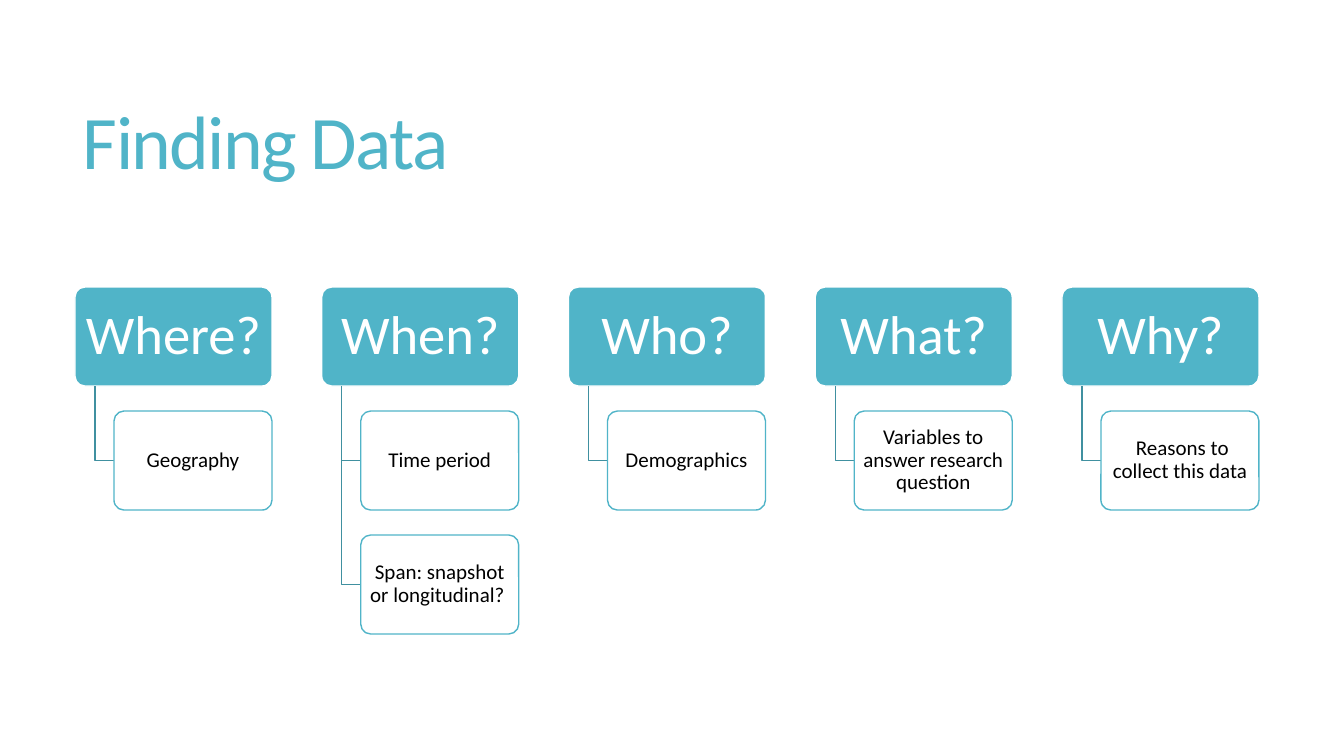
from lxml import etree
from pptx import Presentation
from pptx.dml.color import RGBColor
from pptx.enum.shapes import MSO_SHAPE
from pptx.enum.text import MSO_ANCHOR, MSO_AUTO_SIZE, PP_ALIGN
from pptx.oxml.ns import qn
from pptx.util import Pt

ROUNDED = MSO_SHAPE.ROUNDED_RECTANGLE
MIDDLE = MSO_ANCHOR.MIDDLE
NO_AUTOFIT = MSO_AUTO_SIZE.NONE
LEFT, CENTER = PP_ALIGN.LEFT, PP_ALIGN.CENTER

EMU_PER_PX = 914400 / 100.8
TEAL, STEM, WHITE, BLACK = "50B4C8", "4090A0", "FFFFFF", "000000"
BOX_HEIGHT, BOX_GAP = 99, 25
COLUMN_WIDTH = 197
STEM_INDENT, ANSWER_INDENT = 20, 39

HEADER = {"fill": TEAL, "line": WHITE, "size": 39, "color": WHITE, "inset": 4}
ANSWER = {"fill": WHITE, "line": TEAL, "size": 15, "color": BLACK, "inset": 3, "alpha": 90}

QUESTIONS = [
    ("Where?", ["Geography"]),
    ("When?", ["Time period", "Span: snapshot or longitudinal? "]),
    ("Who?", ["Demographics"]),
    ("What?", ["Variables to answer research question"]),
    ("Why?", [" Reasons to collect this data"]),
]


def px(length):
    """Turn pixels into EMU."""
    return round(length * EMU_PER_PX)


def rgb(color):
    """Turn a hex string into a colour."""
    return RGBColor.from_string(color)


def set_values(target, values):
    """Set each attribute of the target from a dict."""
    for name, value in values.items():
        setattr(target, name, value)


def write_text(frame, text, size, color, align, spacing, inset):
    """Write one formatted paragraph into a text frame and return its run."""
    set_values(frame, {
        "word_wrap": True, "auto_size": NO_AUTOFIT, "vertical_anchor": MIDDLE,
        "margin_left": px(inset), "margin_right": px(inset),
        "margin_top": px(5), "margin_bottom": px(5),
    })
    para = frame.paragraphs[0]
    set_values(para, {"alignment": align, "line_spacing": spacing})
    span = para.add_run()
    span.text = text
    set_values(span.font, {"name": "Calibri", "size": Pt(size)})
    span.font.color.rgb = rgb(color)
    return span


def outline(shape, color):
    """Give a shape a one-point line and no shadow."""
    shape.shadow.inherit = False
    shape.line.color.rgb = rgb(color)
    shape.line.width = Pt(1)


def add_title(page, text, left, top, width, height):
    """Place the slide title in the given box."""
    title = page.shapes.title
    set_values(title, {"left": px(left), "top": px(top),
                       "width": px(width), "height": px(height)})
    span = write_text(title.text_frame, text, 54, TEAL, LEFT, 0.85, 10)
    span.font._element.set("spc", "-120")


def add_card(page, text, style, left, top, width):
    """Place a rounded card with centred text."""
    card = page.shapes.add_shape(ROUNDED, px(left), px(top), px(width), px(BOX_HEIGHT))
    card.adjustments[0] = 0.1
    card.fill.solid()
    card.fill.fore_color.rgb = rgb(style["fill"])
    if "alpha" in style:
        color = card._element.spPr.find(qn("a:solidFill")).find(qn("a:srgbClr"))
        etree.SubElement(color, qn("a:alpha")).set("val", str(style["alpha"] * 1000))
    outline(card, style["line"])
    write_text(card.text_frame, text, style["size"], style["color"], CENTER, 0.9, style["inset"])


def add_stem(page, left, top, right, bottom):
    """Draw a line down and then right to an answer."""
    builder = page.shapes.build_freeform(px(left), px(top))
    builder.add_line_segments([(px(left), px(bottom)), (px(right), px(bottom))], close=False)
    stem = builder.convert_to_shape()
    stem.fill.background()
    outline(stem, STEM)


def add_column(page, question, answers, left, top, width):
    """Place a question with its answers hanging below it."""
    add_card(page, question, HEADER, left, top, width)
    answer_left = left + ANSWER_INDENT
    for row, answer in enumerate(answers, start=1):
        answer_top = top + row * (BOX_HEIGHT + BOX_GAP)
        add_stem(page, left + STEM_INDENT, top + BOX_HEIGHT,
                 answer_left, answer_top + BOX_HEIGHT / 2)
        add_card(page, answer, ANSWER, answer_left, answer_top, width - ANSWER_INDENT)


def add_questions(page, left, top, width):
    """Spread the question columns evenly over the given width."""
    step = (width - COLUMN_WIDTH) / (len(QUESTIONS) - 1)
    for index, (question, answers) in enumerate(QUESTIONS):
        add_column(page, question, answers, left + index * step, top, COLUMN_WIDTH)


def main():
    """Build and save the deck."""
    deck = Presentation()
    set_values(deck, {"slide_width": px(1344), "slide_height": px(756)})
    page = deck.slides.add_slide(deck.slide_layouts[5])
    add_title(page, "Finding Data", 73, 55, 1187, 182)
    add_questions(page, 75, 287, 1184)
    deck.save("out.pptx")


if __name__ == "__main__":
    main()
